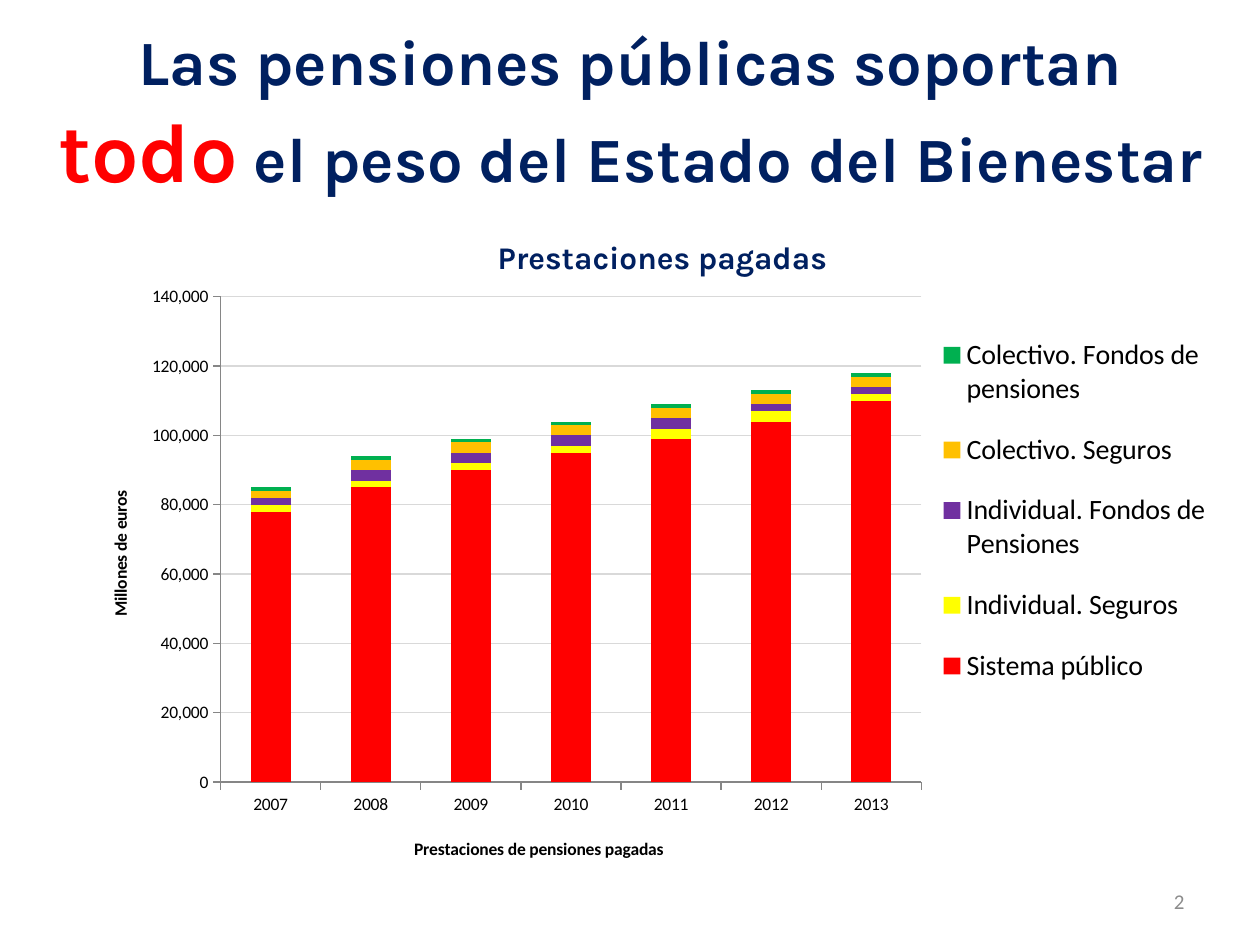
from lxml.etree import SubElement, QName
from pptx import Presentation
from pptx.chart.data import CategoryChartData
from pptx.dml.color import RGBColor
from pptx.enum.chart import XL_CHART_TYPE as ChartType, XL_LEGEND_POSITION as LegendPos
from pptx.enum.chart import XL_TICK_MARK as Tick
from pptx.enum.text import MSO_ANCHOR as Anchor, PP_ALIGN as Align
from pptx.oxml.ns import qn
from pptx.util import Cm, Pt

NAVY, RED, BLACK, GRAY = "002060", "FF0000", "000000", "8C8C8C"
YEARS = [str(year) for year in range(2007, 2014)]
SERIES = [
    ("Sistema público", RED, (78000, 85000, 90000, 95000, 99000, 104000, 110000)),
    ("Individual. Seguros", "FFFF00", (2000, 2000, 2000, 2000, 3000, 3000, 2000)),
    ("Individual. Fondos de Pensiones", "7030A0",
     (2000, 3000, 3000, 3000, 3000, 2000, 2000)),
    ("Colectivo. Seguros", "FFC000", (2000, 3000, 3000, 3000, 3000, 3000, 3000)),
    ("Colectivo. Fondos de pensiones", "00B050", (1000,) * 7),
]


def rgb(value):
    return RGBColor.from_string(value)


def set_font(font, size, color=BLACK, name="Calibri", bold=False):
    font.size, font.name, font.bold = Pt(size), name, bold
    font.color.rgb = rgb(color)


def add_run(p, text, **fmt):
    r = p.add_run()
    r.text = text
    set_font(r.font, **fmt)


def add_box(s, box, anchor=Anchor.TOP):
    tf = s.shapes.add_textbox(*map(Cm, box)).text_frame
    tf.word_wrap = True
    tf.vertical_anchor = anchor
    return tf


def set_layout(element, index, inner=False, **fractions):
    """Place a chart part by fractions of the chart area."""
    for old in element.findall(qn("c:layout")):
        element.remove(old)
    layout = element.makeelement(qn("c:layout"))
    element.insert(index, layout)
    manual = SubElement(layout, qn("c:manualLayout"))
    settings = [("layoutTarget", "inner")] if inner else []
    settings += [("xMode", "edge"), ("yMode", "edge"), *fractions.items()]
    for tag, value in settings:
        SubElement(manual, QName(qn("c:layout")[1:].split("}")[0], tag)).set("val", str(value))


def set_title(owner, title, text, x, y, **fmt):
    p = title.text_frame.paragraphs[0]
    add_run(p, text, bold=True, **fmt)
    set_layout(title._element.find(qn("c:title")) if owner is None else title._element,
               1, x=x, y=y)


def heading(s, box):
    tf = add_box(s, box)
    first, second = tf.paragraphs[0], tf.add_paragraph()
    first.alignment = second.alignment = Align.CENTER
    main = dict(size=36, color=NAVY, name="Karla", bold=True)
    add_run(first, "Las pensiones públicas soportan", **main)
    add_run(second, "todo", **{**main, "size": 48, "color": RED})
    add_run(second, " el peso del Estado del Bienestar", **main)


def benefits_chart(s, box):
    data = CategoryChartData(number_format="#,##0")
    data.categories = YEARS
    for name, _, values in SERIES:
        data.add_series(name, values)
    chart = s.shapes.add_chart(ChartType.COLUMN_STACKED, *map(Cm, box), data).chart
    set_font(chart.font, 10)

    # Columns
    plot = chart.plots[0]
    plot.overlap, plot.gap_width, plot.vary_by_categories = 100, 150, False
    for series, (_, color, _) in zip(plot.series, SERIES):
        series.format.fill.solid()
        series.format.fill.fore_color.rgb = rgb(color)
    set_layout(chart._chartSpace.chart.plotArea, 0, inner=True,
               x=0.126, y=0.138, w=0.604, h=0.72)

    # Axes
    for axis in (chart.category_axis, chart.value_axis):
        axis.major_tick_mark, axis.minor_tick_mark = Tick.OUTSIDE, Tick.NONE
        axis.format.line.color.rgb = rgb("868686")
        axis.format.line.width = Pt(0.75)
    scale = chart.value_axis
    scale.minimum_scale, scale.maximum_scale, scale.major_unit = 0, 140000, 20000
    scale.tick_labels.number_format = "#,##0"
    scale.tick_labels.number_format_is_linked = False
    grid = scale.major_gridlines.format.line
    grid.color.rgb, grid.width = rgb("D9D9D9"), Pt(0.75)

    # Titles
    set_title(chart, chart.chart_title, "Prestaciones pagadas", 0.36, 0.04,
              size=18, color=NAVY, name="Karla")
    set_title(chart, chart.category_axis.axis_title, "Prestaciones de pensiones pagadas",
              0.29, 0.935, size=10)
    set_title(chart, scale.axis_title, "Millones de euros", 0.027, 0.42, size=10)

    # Legend
    chart.has_legend = True
    legend = chart.legend
    legend.position, legend.include_in_layout = LegendPos.RIGHT, False
    set_font(legend.font, 16)
    set_layout(legend._element, 1, x=0.732, y=0.16, w=0.26, h=0.59)


def page_number(s, box):
    p = add_box(s, box, Anchor.MIDDLE).paragraphs[0]
    p.alignment = Align.RIGHT
    add_run(p, "2", size=12, color=GRAY)


def main():
    prs = Presentation()
    prs.slide_width, prs.slide_height = Cm(25.4), Cm(19.05)
    s = prs.slides.add_slide(prs.slide_layouts[6])
    benefits_chart(s, (1.5, 4.11, 23.39, 13.59))
    heading(s, (0.71, 0.33, 24, 3.84))
    page_number(s, (18.21, 17.65, 5.92, 1.02))
    prs.save("out.pptx")


if __name__ == "__main__":
    main()
